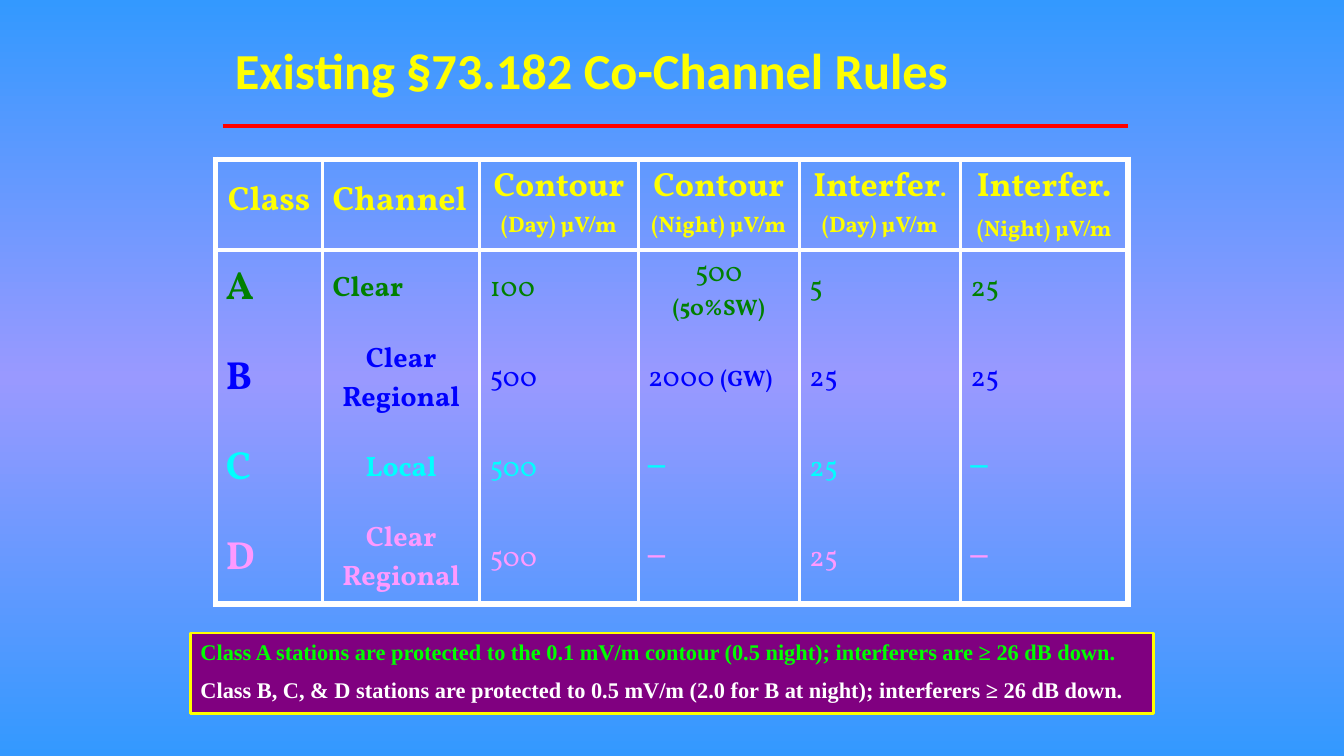
from copy import deepcopy
from dataclasses import dataclass
from itertools import accumulate

from lxml.etree import SubElement
from pptx import Presentation
from pptx.dml.color import RGBColor as Rgb
from pptx.enum.shapes import MSO_CONNECTOR as Connector, MSO_SHAPE as Preset
from pptx.enum.text import MSO_ANCHOR as Anchor, MSO_AUTO_SIZE as AutoSize, PP_ALIGN as Align
from pptx.oxml import parse_xml
from pptx.oxml.ns import nsdecls, qn
from pptx.util import Inches, Length, Pt

SLIDE_WIDTH, SLIDE_HEIGHT = Inches(13.33), Inches(7.5)
NO_TABLE_STYLE = "{2D5ABB26-0587-4C30-8999-92F81FD0307C}"


@dataclass(frozen=True)
class Theme:
    sky: str = "3399FF"
    lilac: str = "9999FF"
    yellow: str = "FFFF00"
    red: str = "FF0000"
    white: str = "FFFFFF"
    green: str = "008000"
    blue: str = "0000FF"
    cyan: str = "00FFFF"
    pink: str = "FF99FF"
    purple: str = "800080"
    lime: str = "00FF00"
    title_font: str = "Calibri"
    table_font: str = "Vollkorn"
    note_font: str = "Times New Roman"
    title_size: int = 36
    class_size: int = 28
    heading_size: int = 24
    value_size: int = 20
    small_size: int = 16


THEME = Theme()


@dataclass(frozen=True)
class Words:
    text: str
    size: int
    bold: bool = True


@dataclass(frozen=True)
class Entry:
    paragraphs: tuple[tuple[Words, ...], ...]
    align: Align = Align.LEFT


@dataclass(frozen=True)
class Row:
    color: str
    entries: tuple[Entry, ...]


def across(percent: float) -> Length:
    return Length(round(SLIDE_WIDTH * percent / 100))


def down(percent: float) -> Length:
    return Length(round(SLIDE_HEIGHT * percent / 100))


# Layout, in percent of the slide's width and height
TABLE_LEFT, TABLE_TOP = 16.05, 21.07
COLUMNS = (7.95, 11.7, 11.78, 12, 12, 12.45)
ROWS = (11.33, 11.87, 11.87, 11.87, 11.87)
TABLE_BOTTOM = TABLE_TOP + sum(ROWS)
TABLE_RIGHT = TABLE_LEFT + sum(COLUMNS)
HEADER_LINE = 33.07


# Kinds of table entry
def heading(*parts: Words) -> Entry:
    return Entry((parts,), Align.CENTER)


def big(text: str) -> Words:
    return Words(text, THEME.heading_size)


def small(text: str) -> Words:
    return Words(text, THEME.small_size)


def plain(text: str) -> Words:
    return Words(text, THEME.value_size, False)


def class_row(color: str, letter: str, channel: str, channel_align: Align,
              day: str, night: Entry, *interference: str) -> Row:
    values = [Entry(((plain(text),),)) for text in (day, *interference)]
    return Row(color, (
        Entry(((Words(letter, THEME.class_size),),)),
        Entry(((Words(channel, THEME.value_size),),), channel_align),
        values[0], night, *values[1:]))


NO_LIMIT = Entry(((plain("─"),),))
TABLE_ROWS = (
    Row(THEME.yellow, (
        heading(big("Class")),
        Entry(((big("Channel"),),)),
        heading(big("Contour "), small("(Day) μV/m")),
        heading(big("Contour "), small("(Night) μV/m")),
        heading(big("Interfer"), small(". (Day) μV/m")),
        Entry(((big("Interfer."),), (small("(Night) μV/m"),)), Align.CENTER))),
    class_row(THEME.green, "A", "Clear", Align.LEFT, "100",
              heading(plain("500 "), small("(50%SW)")), "5", "25"),
    class_row(THEME.blue, "B", "Clear Regional", Align.CENTER, "500",
              Entry(((plain("2000 "), small("(GW)")),)), "25", "25"),
    class_row(THEME.cyan, "C", "Local", Align.CENTER, "500", NO_LIMIT, "25", "─"),
    class_row(THEME.pink, "D", "Clear Regional", Align.CENTER, "500", NO_LIMIT, "25", "─"),
)
NOTES = (
    (THEME.lime, "Class A stations are protected to the 0.1 mV/m contour (0.5 night); "
                 "interferers are ≥ 26 dB down."),
    (THEME.white, "Class B, C, & D stations are protected to 0.5 mV/m (2.0 for B at night); "
                  "interferers ≥ 26 dB down."),
)


# Drawing helpers
def add_words(paragraph, words: Words, font_name: str, color: str) -> None:
    run = paragraph.add_run()
    run.text = words.text
    run.font.name, run.font.size, run.font.bold = font_name, Pt(words.size), words.bold
    run.font.color.rgb = Rgb.from_string(color)


def next_paragraph(frame, index: int, gap: float):
    if index == 0:
        return frame.paragraphs[0]
    paragraph = frame.add_paragraph()
    paragraph.space_before = Pt(gap)
    return paragraph


def add_line(slide, start: tuple[float, float], end: tuple[float, float],
             color: str, points: float) -> None:
    line = slide.shapes.add_connector(Connector.STRAIGHT, across(start[0]), down(start[1]),
                                      across(end[0]), down(end[1]))
    line.line.color.rgb, line.line.width = Rgb.from_string(color), Pt(points)
    SubElement(line._element.spPr, qn("a:effectLst"))


def add_borders(cell, sides: list[str]) -> None:
    properties = cell._tc.get_or_add_tcPr()
    for position, side in enumerate(sides):
        properties.insert(position, parse_xml(
            f'<a:ln{side} {nsdecls("a")} w="{Pt(4.5)}"><a:solidFill>'
            f'<a:srgbClr val="{THEME.white}"/></a:solidFill></a:ln{side}>'))


def paint_background(slide) -> None:
    fill = slide.background.fill
    fill.gradient()
    fill.gradient_angle = 270
    stop_list = next(slide.element.iter(qn("a:gsLst")))
    stop_list.append(deepcopy(stop_list[-1]))
    for stop, color, position in zip(fill.gradient_stops,
                                     (THEME.sky, THEME.lilac, THEME.sky), (0, 0.5, 1)):
        stop.color.rgb, stop.position = Rgb.from_string(color), position


def add_title(slide) -> None:
    box = slide.shapes.add_textbox(across(16.5), down(3.2), across(55.06), down(10.67))
    frame = box.text_frame
    frame.word_wrap, frame.vertical_anchor = True, Anchor.BOTTOM
    paragraph = frame.paragraphs[0]
    paragraph.alignment = Align.CENTER
    add_words(paragraph, Words("Existing §73.182 Co-Channel Rules", THEME.title_size),
              THEME.title_font, THEME.yellow)


def add_rules_table(slide) -> None:
    table = slide.shapes.add_table(
        len(ROWS), len(COLUMNS), across(TABLE_LEFT), down(TABLE_TOP),
        across(sum(COLUMNS)), down(sum(ROWS))).table
    table.first_row = table.horz_banding = False
    next(table._tbl.iter(qn("a:tableStyleId"))).text = NO_TABLE_STYLE
    for column, width in zip(table.columns, COLUMNS):
        column.width = across(width)
    for row, height in zip(table.rows, ROWS):
        row.height = down(height)
    for row_index, row in enumerate(TABLE_ROWS):
        for column_index, entry in enumerate(row.entries):
            cell = table.cell(row_index, column_index)
            cell.vertical_anchor = Anchor.MIDDLE
            cell.fill.background()
            edges = {"L": column_index == 0, "R": column_index == len(COLUMNS) - 1,
                     "T": row_index == 0, "B": row_index == len(ROWS) - 1}
            add_borders(cell, [side for side, outer in edges.items() if outer])
            for index, parts in enumerate(entry.paragraphs):
                paragraph = next_paragraph(cell.text_frame, index, 0.2 * THEME.small_size)
                paragraph.alignment = entry.align
                for words in parts:
                    add_words(paragraph, words, THEME.table_font, row.color)


def add_note(slide) -> None:
    shape = slide.shapes.add_shape(Preset.RECTANGLE, across(14.18), down(83.73),
                                   across(71.64), down(10.67))
    shape.shadow.inherit = False
    shape.fill.solid()
    shape.fill.fore_color.rgb = Rgb.from_string(THEME.purple)
    shape.line.color.rgb, shape.line.width = Rgb.from_string(THEME.yellow), Pt(2)
    frame = shape.text_frame
    frame.word_wrap, frame.vertical_anchor = True, Anchor.TOP
    frame.auto_size = AutoSize.SHAPE_TO_FIT_TEXT
    for index, (color, text) in enumerate(NOTES):
        paragraph = next_paragraph(frame, index, 0.5 * THEME.small_size)
        paragraph.alignment = Align.LEFT
        add_words(paragraph, small(text), THEME.note_font, color)


def main() -> None:
    presentation = Presentation()
    presentation.slide_width, presentation.slide_height = SLIDE_WIDTH, SLIDE_HEIGHT
    slide = presentation.slides.add_slide(presentation.slide_layouts[6])
    paint_background(slide)
    add_title(slide)
    add_line(slide, (16.58, 16.67), (83.95, 16.67), THEME.red, 3)
    add_rules_table(slide)
    add_note(slide)
    # Inner table lines
    add_line(slide, (TABLE_LEFT, HEADER_LINE), (TABLE_RIGHT, HEADER_LINE), THEME.white, 2.25)
    for edge in accumulate(COLUMNS[:-1], initial=TABLE_LEFT):
        if edge > TABLE_LEFT:
            add_line(slide, (edge, TABLE_TOP), (edge, TABLE_BOTTOM), THEME.white, 2.25)
    presentation.save("out.pptx")


if __name__ == "__main__":
    main()
